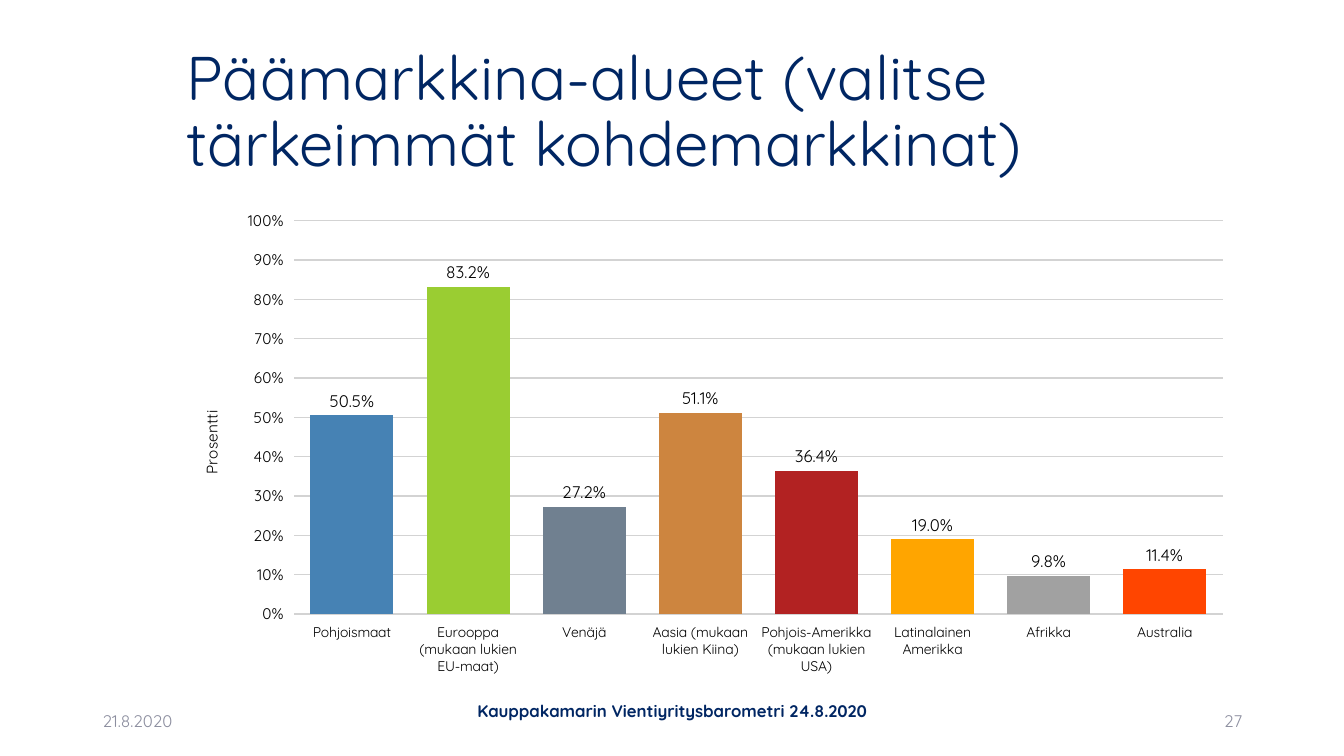
from lxml import etree
from pptx import Presentation
from pptx.chart.data import CategoryChartData
from pptx.dml.color import RGBColor
from pptx.enum.chart import XL_CHART_TYPE as ChartType, XL_LABEL_POSITION as LabelPosition, XL_TICK_MARK as TickMark
from pptx.enum.text import MSO_ANCHOR as Anchor, PP_ALIGN as Align
from pptx.oxml.ns import qn
from pptx.util import Inches, Pt

FONT = "Quicksand"
NAVY, GREY, BLACK, GRID, WHITE = "002663", "8C8E9F", "000000", "D3D3D3", "FFFFFF"

TITLE = "Päämarkkina-alueet (valitse tärkeimmät kohdemarkkinat)"
DATE = "21.8.2020"
FOOTER = "Kauppakamarin Vientiyritysbarometri 24.8.2020"
PAGE_NUMBER = "27"
AXIS_TITLE = "Prosentti"
MARKETS = [
    ("Pohjoismaat", 0.505, "4682B4"),
    ("Eurooppa (mukaan lukien EU-maat)", 0.832, "9ACD32"),
    ("Venäjä", 0.272, "708090"),
    ("Aasia (mukaan lukien Kiina)", 0.511, "CD853F"),
    ("Pohjois-Amerikka (mukaan lukien USA)", 0.364, "B22222"),
    ("Latinalainen Amerikka", 0.19, "FFA500"),
    ("Afrikka", 0.098, "A1A1A1"),
    ("Australia", 0.114, "FF4500"),
]
CONTENT_LEFT, CONTENT_WIDTH = 1.75, 10.59
FOOTER_TOP, FOOTER_HEIGHT = 6.95, 0.4
PLOT_LAYOUT = {"x": 0.11, "y": 0.04, "w": 0.87, "h": 0.82}


def color(hex_string):
    return RGBColor.from_string(hex_string)


def style_font(font, size, hex_string, bold=False):
    font.name = FONT
    font.size = Pt(size)
    font.bold = bold
    font.color.rgb = color(hex_string)


def add_text(slide, box, text, size, hex_string, align=Align.LEFT, bold=False):
    shape = slide.shapes.add_textbox(*map(Inches, box))
    text_frame = shape.text_frame
    text_frame.word_wrap = True
    text_frame.vertical_anchor = Anchor.MIDDLE
    text_frame.text = text
    paragraph = text_frame.paragraphs[0]
    paragraph.alignment = align
    style_font(paragraph.runs[0].font, size, hex_string, bold)
    return text_frame


def fix_plot_area(chart):
    plot_area = chart._chartSpace.chart.plotArea
    layout = plot_area.find(qn("c:layout"))
    if layout is None:
        layout = etree.Element(qn("c:layout"))
        plot_area.insert(0, layout)
    manual = etree.SubElement(layout, qn("c:manualLayout"))
    settings = {"layoutTarget": "inner", "xMode": "edge", "yMode": "edge", **PLOT_LAYOUT}
    for name, value in settings.items():
        etree.SubElement(manual, qn(f"c:{name}")).set("val", str(value))
    properties = etree.SubElement(plot_area, qn("c:spPr"))
    fill = etree.SubElement(properties, qn("a:solidFill"))
    etree.SubElement(fill, qn("a:srgbClr")).set("val", WHITE)


def add_market_chart(slide):
    names, shares, bar_colors = zip(*MARKETS)
    data = CategoryChartData(number_format="0.0%")
    data.categories = names
    data.add_series("Series 1", shares)
    box = (CONTENT_LEFT, 2, CONTENT_WIDTH, 4.76)
    chart = slide.shapes.add_chart(ChartType.COLUMN_CLUSTERED, *map(Inches, box), data).chart
    chart.has_legend = False
    chart.has_title = False
    style_font(chart.font, 11, BLACK)

    for axis, size in ((chart.category_axis, 10), (chart.value_axis, 11)):
        axis.major_tick_mark = TickMark.OUTSIDE
        axis.minor_tick_mark = TickMark.NONE
        axis.format.line.fill.background()
        style_font(axis.tick_labels.font, size, BLACK)

    value_axis = chart.value_axis
    value_axis.minimum_scale, value_axis.maximum_scale = 0, 1
    value_axis.major_unit = 0.1
    value_axis.tick_labels.number_format = "0%"
    value_axis.tick_labels.number_format_is_linked = False
    grid_line = value_axis.major_gridlines.format.line
    grid_line.color.rgb = color(GRID)
    grid_line.width = Pt(1)
    title_frame = value_axis.axis_title.text_frame
    title_frame.text = AXIS_TITLE
    style_font(title_frame.paragraphs[0].runs[0].font, 11, BLACK)

    plot = chart.plots[0]
    plot.gap_width = 40
    plot.vary_by_categories = False
    series = plot.series[0]
    for index, bar_color in enumerate(bar_colors):
        fill = series.points[index].format.fill
        fill.solid()
        fill.fore_color.rgb = color(bar_color)
    labels = series.data_labels
    labels.show_value = True
    labels.position = LabelPosition.OUTSIDE_END
    labels.number_format = "0.0%"
    labels.number_format_is_linked = False
    style_font(labels.font, 12, BLACK)
    fix_plot_area(chart)


def main():
    presentation = Presentation()
    presentation.slide_width = Inches(13.33)
    presentation.slide_height = Inches(7.5)
    slide = presentation.slides.add_slide(presentation.slide_layouts[6])

    title = add_text(slide, (CONTENT_LEFT, 0.4, CONTENT_WIDTH, 1.45), TITLE, 44, NAVY)
    title.paragraphs[0].line_spacing = 0.9
    add_text(slide, (0.92, FOOTER_TOP, 3, FOOTER_HEIGHT), DATE, 12, GREY)
    footer = add_text(slide, (4.42, FOOTER_TOP, 4.5, FOOTER_HEIGHT), FOOTER, 12, NAVY, Align.CENTER, True)
    footer.vertical_anchor = Anchor.TOP
    footer.margin_top = 0
    add_text(slide, (9.42, FOOTER_TOP, 3, FOOTER_HEIGHT), PAGE_NUMBER, 12, GREY, Align.RIGHT)
    add_market_chart(slide)

    presentation.save("out.pptx")


if __name__ == "__main__":
    main()
